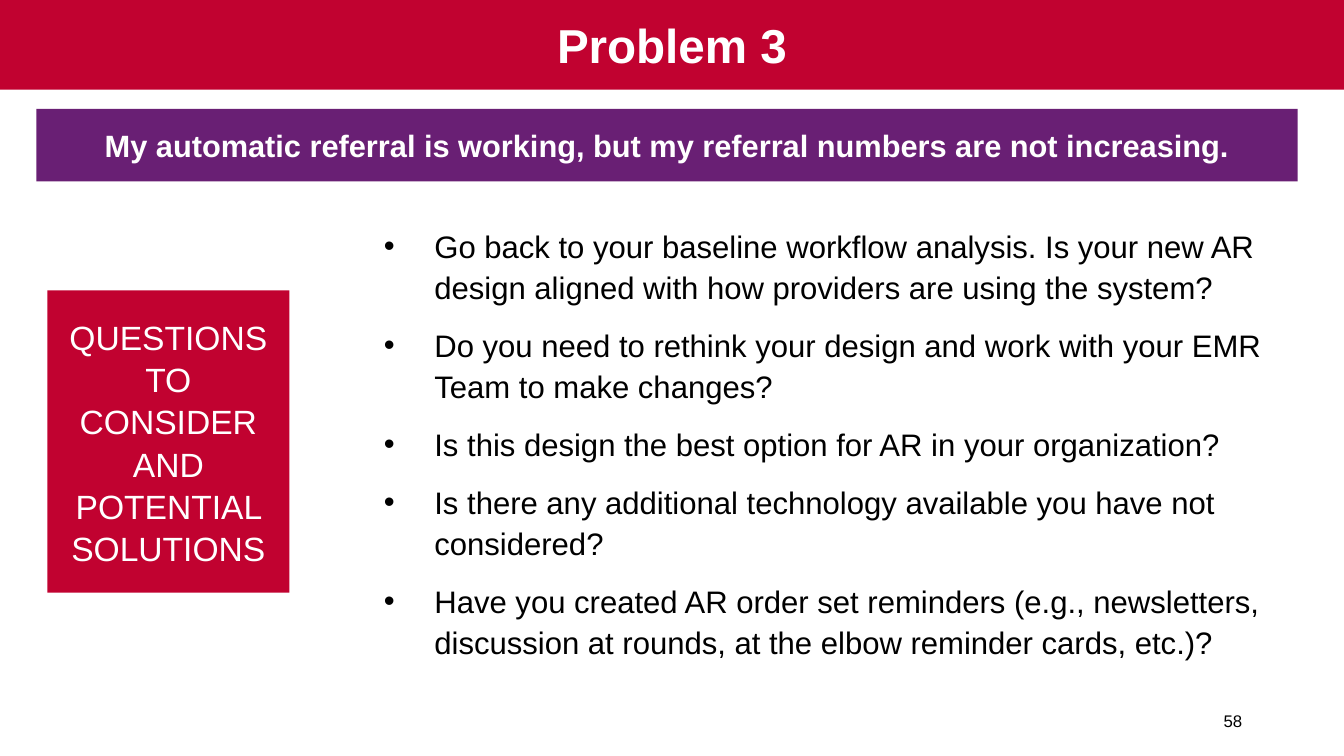
from dataclasses import dataclass

from lxml.etree import SubElement
from pptx import Presentation
from pptx.dml.color import RGBColor
from pptx.enum.shapes import MSO_SHAPE
from pptx.enum.text import MSO_ANCHOR as Anchor, PP_ALIGN as Align
from pptx.oxml.ns import qn
from pptx.slide import Slide
from pptx.util import Inches, Pt

COLORS = {"red": "C10230", "purple": "691F74", "white": "FFFFFF", "black": "000000"}


@dataclass
class Panel:
    text: str
    left: float
    top: float
    width: float
    height: float
    fill: str
    size: float
    bold: bool = False
    spacing: float = 1.0


PANELS = [
    Panel("Problem 3", 0, 0, 13.33, 0.89, "red", 34, bold=True),
    Panel("My automatic referral is working, but my referral numbers are not increasing.",
          0.36, 1.08, 12.51, 0.72, "purple", 22, bold=True),
    Panel("QUESTIONS TO CONSIDER AND POTENTIAL SOLUTIONS",
          0.47, 2.88, 2.4, 3, "red", 24, spacing=1.05),
]

QUESTIONS = [
    "Go back to your baseline workflow analysis. Is your new AR design aligned "
    "with how providers are using the system?",
    "Do you need to rethink your design and work with your EMR Team to make changes?",
    "Is this design the best option for AR in your organization?",
    "Is there any additional technology available you have not considered?",
    "Have you created AR order set reminders (e.g., newsletters, discussion at rounds, "
    "at the elbow reminder cards, etc.)?",
]


def rgb(name: str) -> RGBColor:
    return RGBColor.from_string(COLORS[name])


def write(sp, *texts: str, size: float, color: str = "black", bold: bool = False,
          align: Align = Align.LEFT, anchor: Anchor = Anchor.MIDDLE,
          spacing: float = 1.0, gap: float = 0, bullet: str = "") -> None:
    tf = sp.text_frame
    tf.word_wrap = True
    tf.vertical_anchor = anchor
    for i, text in enumerate(texts):
        p = tf.add_paragraph() if i else tf.paragraphs[0]
        p.alignment = align
        p.line_spacing = spacing
        p.space_before = p.space_after = Pt(gap)
        if bullet:
            pPr = p._p.get_or_add_pPr()
            pPr.set("marL", str(Inches(0.5)))
            pPr.set("indent", str(Inches(-0.5)))
            SubElement(pPr, qn("a:buFont"), typeface="Arial")
            SubElement(pPr, qn("a:buChar"), char=bullet)
        r = p.add_run()
        r.text = text
        r.font.name = "Arial"
        r.font.size = Pt(size)
        r.font.bold = bold
        r.font.color.rgb = rgb(color)


def add_panel(s: Slide, panel: Panel) -> None:
    sp = s.shapes.add_shape(MSO_SHAPE.RECTANGLE, Inches(panel.left), Inches(panel.top),
                            Inches(panel.width), Inches(panel.height))
    sp.shadow.inherit = False
    sp.fill.solid()
    sp.fill.fore_color.rgb = rgb(panel.fill)
    sp.line.fill.background()
    write(sp, panel.text, size=panel.size, color="white", bold=panel.bold,
          align=Align.CENTER, spacing=panel.spacing)


def main() -> None:
    prs = Presentation()
    prs.slide_width, prs.slide_height = Inches(13.33), Inches(7.5)
    s = prs.slides.add_slide(prs.slide_layouts[6])
    for panel in PANELS:
        add_panel(s, panel)
    questions = s.shapes.add_textbox(Inches(3.71), Inches(2.17), Inches(9.02), Inches(4.56))
    write(questions, *QUESTIONS, size=22.2, anchor=Anchor.TOP, spacing=1.1, gap=6, bullet="•")
    number = s.shapes.add_textbox(Inches(9.42), Inches(6.95), Inches(3), Inches(0.4))
    write(number, "58", size=12, align=Align.RIGHT)
    prs.save("out.pptx")


if __name__ == "__main__":
    main()
